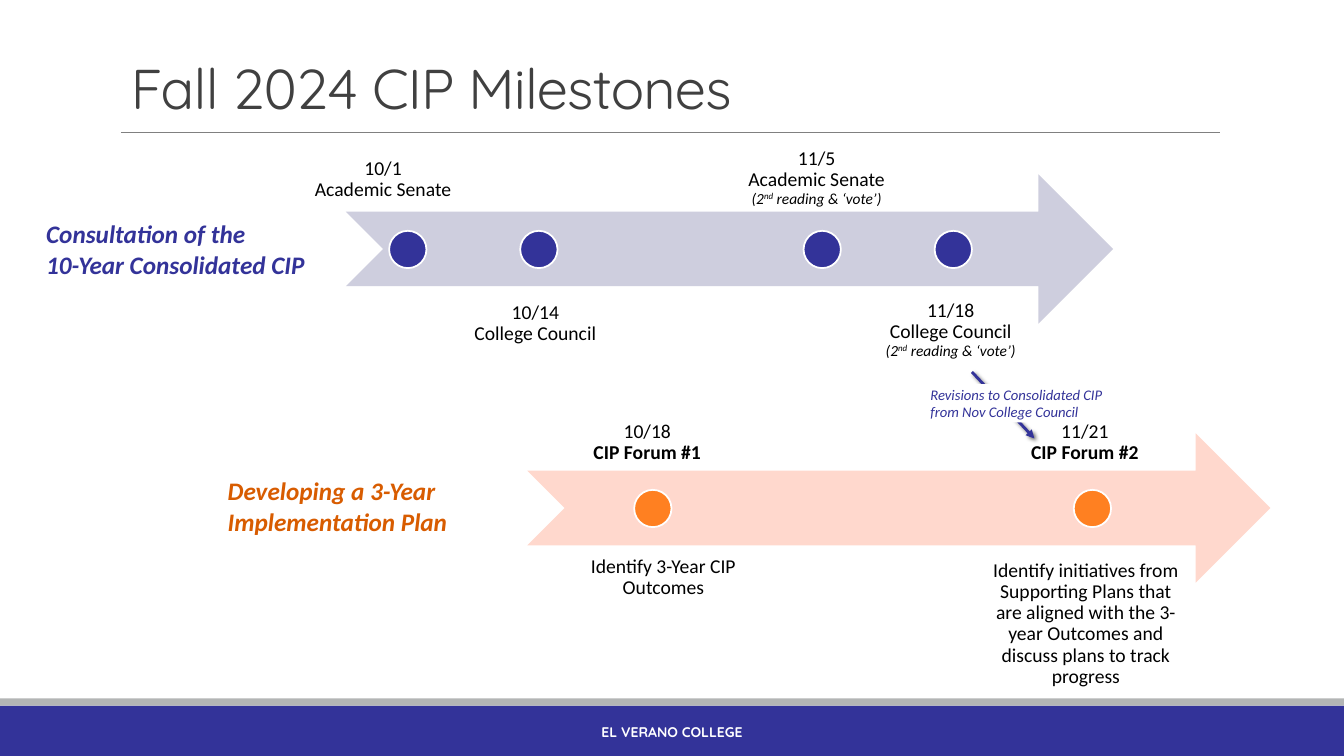
import pptx
import pptx.dml.color
import pptx.enum.shapes
import pptx.enum.text
import pptx.oxml
import pptx.oxml.ns
import pptx.util

PX = 9144  # EMU per px, 100 px to the inch
SHAPE = pptx.enum.shapes.MSO_SHAPE
ANCHOR = pptx.enum.text.MSO_ANCHOR
ALIGN = pptx.enum.text.PP_ALIGN
NAVY, WHITE, BLACK = "333399", "FFFFFF", "000000"
VOTE = ("(2", "nd", " reading & ‘vote’)")


def px(*lengths):
    return [pptx.util.Emu(n * PX) for n in lengths]


def rgb(color):
    return pptx.dml.color.RGBColor.from_string(color)


def add_shape(slide, kind, box, fill, line=None):
    sp = slide.shapes.add_shape(kind, *px(*box))
    sp.shadow.inherit = False
    sp.fill.solid()
    sp.fill.fore_color.rgb = rgb(fill)
    if line:
        sp.line.color.rgb = rgb(line)
        sp.line.width = pptx.util.Pt(1.25)
    else:
        sp.line.fill.background()
    return sp


def add_line(slide, start, end, color, width, effects=""):
    cx = slide.shapes.add_connector(
        pptx.enum.shapes.MSO_CONNECTOR.STRAIGHT, *px(*start, *end))
    cx.line.color.rgb = rgb(color)
    cx.line.width = pptx.util.Pt(width)
    cx._element.spPr.append(pptx.oxml.parse_xml(
        f'<a:effectLst {pptx.oxml.ns.nsdecls("a")}>{effects}</a:effectLst>'))
    return cx


def write(sp, lines, size, color, font="Calibri", bold=False, italic=False,
          align=ALIGN.LEFT, anchor=ANCHOR.TOP, spacing=1.0):
    """Fill a shape with one paragraph per line."""
    tf = sp.text_frame
    tf.word_wrap = True
    tf.vertical_anchor = anchor
    for i, line in enumerate(lines):
        p = tf.paragraphs[0] if i == 0 else tf.add_paragraph()
        p.alignment, p.line_spacing = align, spacing
        p.font.name, p.font.size = font, pptx.util.Pt(size)
        p.font.bold, p.font.italic = bold, italic
        p.font.color.rgb = rgb(color)
        for text in line if isinstance(line, tuple) else (line,):
            p.add_run().text = text
    return tf


def add_text(slide, box, lines, size, color, **style):
    return write(slide.shapes.add_textbox(*px(*box)), lines, size, color, **style)


def add_frame(slide, width, height):
    """Title, its rule and the footer band."""
    add_shape(slide, SHAPE.RECTANGLE, (0, height - 50, width, 50), NAVY)
    add_shape(slide, SHAPE.RECTANGLE, (0, height - 57, width, 7), "B3B5B5")
    add_line(slide, (120, 131), (1210, 131), "808080", 0.5)
    tf = add_text(slide, (120, 31, 1143, 94), ["Fall 2024 CIP Milestones"], 40,
                  "404040", font="Quicksand", anchor=ANCHOR.BOTTOM, spacing=0.85)
    tf.paragraphs[0].runs[0].font._element.set("spc", "-50")
    add_text(slide, (403, height - 44, 527, 40), ["EL VERANO COLLEGE"], 10, WHITE,
             font="Quicksand", bold=True, align=ALIGN.CENTER, anchor=ANCHOR.MIDDLE)


def add_label(slide, center, edge, width, above, lines):
    """Centred label whose text ends (above) or starts (below) at edge."""
    height = 60
    top = edge - height if above else edge
    tf = add_text(slide, (center - width // 2, top, width, height), lines, 14, BLACK,
                  align=ALIGN.CENTER, spacing=0.9,
                  anchor=ANCHOR.BOTTOM if above else ANCHOR.TOP)
    tf.margin_left = tf.margin_right = tf.margin_top = tf.margin_bottom = 0
    for p, line in zip(tf.paragraphs, lines):
        if line == VOTE:
            p.font.size, p.font.italic = pptx.util.Pt(11), True
            p.runs[1].font._element.set("baseline", "30000")
        p.font.bold = p.text.startswith("CIP Forum")


def add_timeline(slide, box, fill, dot_color, dots, labels):
    """Notched arrow with milestone dots and labels, placed from its corner."""
    x, y, _, h = box
    dot = 37
    add_shape(slide, SHAPE.NOTCHED_RIGHT_ARROW, box, fill)
    for dx in dots:
        add_shape(slide, SHAPE.OVAL, (x + dx, y + (h - dot + 1) // 2, dot, dot),
                  dot_color, WHITE)
    for dx, dy, width, lines in labels:
        add_label(slide, x + dx, y + dy, width, dy < h // 2, lines)


def add_revision_note(slide, x, y):
    """Arrow between the timelines with a note across it."""
    cx = add_line(slide, (x + 51, y - 12), (x + 113, y + 54), NAVY, 2,
                  '<a:outerShdw blurRad="38100" dist="25400" dir="2700000">'
                  '<a:srgbClr val="000000"><a:alpha val="60000"/></a:srgbClr>'
                  '</a:outerShdw>')
    cx.line._get_or_add_ln().append(pptx.oxml.parse_xml(
        f'<a:tailEnd {pptx.oxml.ns.nsdecls("a")} type="triangle"/>'))
    sp = add_shape(slide, SHAPE.RECTANGLE, (x, y, 193, 38), WHITE)
    write(sp, ["Revisions to Consolidated CIP from Nov College Council"], 10.5, NAVY,
          italic=True, anchor=ANCHOR.MIDDLE)


def main():
    prs = pptx.Presentation()
    prs.slide_width, prs.slide_height = px(1333, 750)
    slide = prs.slides.add_slide(prs.slide_layouts[6])
    add_frame(slide, 1333, 750)

    # Consultation timeline
    add_text(slide, (36, 212, 287, 71),
             ["Consultation of the", "10-Year Consolidated CIP"],
             18, NAVY, bold=True, italic=True)
    add_timeline(slide, (343, 173, 761, 148), "CECEDE", NAVY, (43, 173, 454, 584), [
        (37, 26, 160, ["10/1", "Academic Senate"]),
        (188, 127, 160, ["10/14", "College Council"]),
        (467, 33, 160, ["11/5", "Academic Senate", VOTE]),
        (600, 125, 160, ["11/18", "College Council", VOTE]),
    ])

    # Implementation timeline
    add_text(slide, (216, 467, 280, 71), ["Developing a 3-Year Implementation Plan"],
             18, "D85C00", bold=True, italic=True)
    add_timeline(slide, (523, 430, 737, 148), "FFD8CD", "FF8021", (106, 542), [
        (119, 30, 228, ["10/18", "CIP Forum #1"]),
        (553, 30, 228, ["11/21", "CIP Forum #2"]),
        (135, 122, 206, ["Identify 3-Year CIP Outcomes"]),
        (554, 126, 200, ["Identify initiatives from Supporting Plans that are aligned "
                         "with the 3-year Outcomes and discuss plans to track progress"]),
    ])

    add_revision_note(slide, 913, 381)
    prs.save("out.pptx")


if __name__ == "__main__":
    main()
